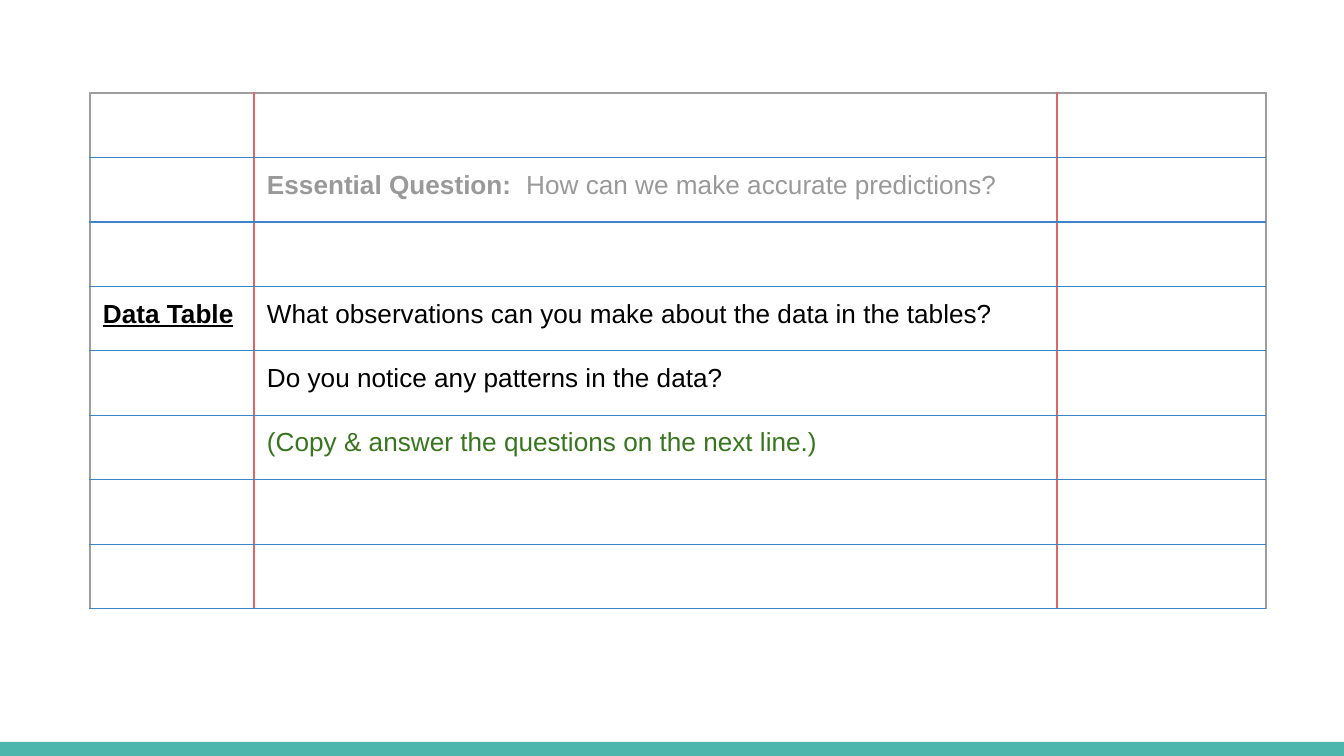
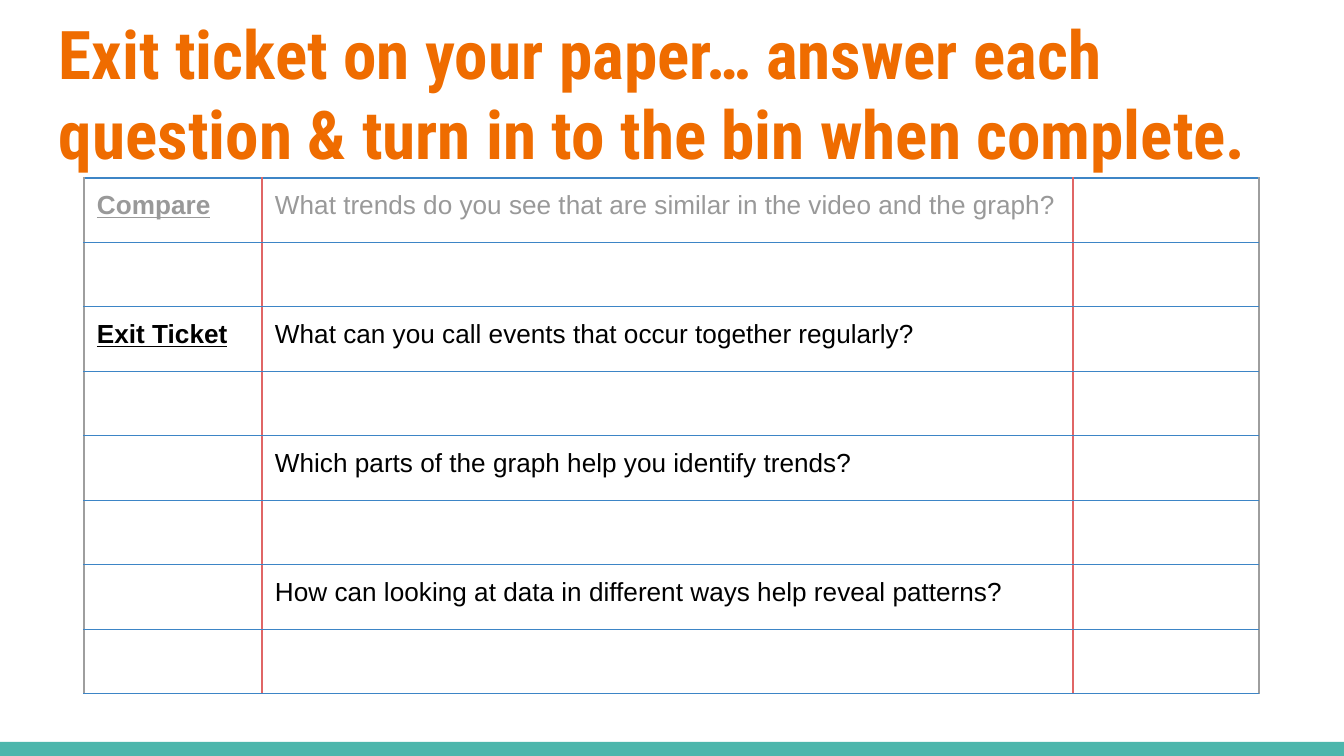
from lxml.etree import SubElement
from pptx import Presentation
from pptx.dml.color import RGBColor
from pptx.enum.shapes import MSO_SHAPE as Shape
from pptx.enum.text import MSO_ANCHOR as Anchor
from pptx.oxml.ns import qn
from pptx.util import Emu, Pt

COLORS = {"paper": "FFFFFF", "band": "4DB6AC", "title": "EF6C00", "rule": "3D85C6",
          "margin": "E06666", "edge": "9E9E9E", "ink": "000000", "faded": "999999",
          "green": "38761D"}

# Text formats
BODY = {"name": "Arial", "size": Pt(14), "bold": False, "color": "ink"}
FORMATS = {
    "title": BODY | {"name": "Roboto Condensed", "size": Pt(36), "bold": True,
                     "color": "title"},
    "body": BODY,
    "label": BODY | {"bold": True, "underline": True},
    "faded": BODY | {"color": "faded"},
    "faded bold": BODY | {"color": "faded", "bold": True},
    "faded label": BODY | {"color": "faded", "bold": True, "underline": True},
    "green": BODY | {"color": "green"},
}

# Content: each notebook row is (label spans, note spans)
BLANK = ([], [])
PAGES = [
    {"at": (90, 93), "columns": (164, 803, 209), "top": "edge", "rows": [
        BLANK,
        ([], [("Essential Question: ", "faded bold"),
              (" How can we make accurate predictions?", "faded")]),
        BLANK,
        ([("Data Table", "label")],
         [("What observations can you make about the data in the tables?", "body")]),
        ([], [("Do you notice any patterns in the data?", "body")]),
        ([], [("(Copy & answer the questions on the next line.)", "green")]),
        BLANK,
        BLANK,
    ]},
    {"title": "Exit ticket on your paper… answer each question & turn in to the bin "
              "when complete.",
     "at": (84, 178), "columns": (178, 811, 186), "top": "rule", "rows": [
        ([("Compare", "faded label")],
         [("What trends do you see that are similar in the video and the graph?", "faded")]),
        BLANK,
        ([("Exit Ticket", "label")],
         [("What can you call events that occur together regularly?", "body")]),
        BLANK,
        ([], [("Which parts of the graph help you identify trends?", "body")]),
        BLANK,
        ([], [("How can looking at data in different ways help reveal patterns?", "body")]),
        BLANK,
     ]},
]

# Layout in px
PAGE_W, PAGE_H = 1344, 756
BAND_H = 14
TABLE_H = 516
TITLE_BOX = (46, -1, 1252, 104)
INSET = 13
SIDES = {"left": "a:lnL", "right": "a:lnR", "top": "a:lnT", "bottom": "a:lnB"}


def px(length):
    return Emu(round(length * 914400 / 134.4))


def rgb(name):
    return RGBColor.from_string(COLORS[name])


def add_spans(para, spans):
    for text, kind in spans:
        span = para.add_run()
        span.text = text
        for key, value in FORMATS[kind].items():
            if key == "color":
                span.font.color.rgb = rgb(value)
            else:
                setattr(span.font, key, value)


def set_insets(target):
    for side in SIDES:
        setattr(target, f"margin_{side}", px(INSET))


def set_borders(cell, borders):
    props = cell._tc.get_or_add_tcPr()
    for side, tag in SIDES.items():
        line = SubElement(props, qn(tag), w=str(Pt(0.75)))
        fill = SubElement(line, qn("a:solidFill"))
        SubElement(fill, qn("a:srgbClr"), val=COLORS[borders[side]])


def add_band(page):
    band = page.shapes.add_shape(Shape.RECTANGLE, 0, px(PAGE_H - BAND_H),
                                 px(PAGE_W), px(BAND_H))
    band.shadow.inherit = False
    band.fill.solid()
    band.fill.fore_color.rgb = rgb("band")
    band.line.fill.background()


def add_title(page, text):
    box = page.shapes.add_textbox(*map(px, TITLE_BOX))
    frame = box.text_frame
    frame.word_wrap = True
    frame.vertical_anchor = Anchor.TOP
    set_insets(frame)
    add_spans(frame.paragraphs[0], [(text, "title")])


def add_notebook(page, at, columns, rows, top):
    frame = page.shapes.add_table(len(rows), len(columns), *map(px, at),
                                  px(sum(columns)), px(TABLE_H))
    table = frame.table
    table.first_row = table.horz_banding = False
    for column, width in zip(table.columns, columns):
        column.width = px(width)

    last = len(columns) - 1
    for r, row in enumerate(rows):
        table.rows[r].height = px(TABLE_H / len(rows))
        for c, spans in enumerate((*row, [])):
            cell = table.cell(r, c)
            set_insets(cell)
            para = cell.text_frame.paragraphs[0]
            add_spans(para, spans)
            if not spans:  # keeps empty rows from growing
                SubElement(para._p, qn("a:endParaRPr"), sz="1400")
            set_borders(cell, {
                "left": "edge" if c == 0 else "margin",
                "right": "edge" if c == last else "margin",
                "top": top if r == 0 else "rule",
                "bottom": "rule",
            })
            cell.fill.background()


def main():
    deck = Presentation()
    deck.slide_width, deck.slide_height = px(PAGE_W), px(PAGE_H)
    for content in PAGES:
        page = deck.slides.add_slide(deck.slide_layouts[6])
        page.background.fill.solid()
        page.background.fill.fore_color.rgb = rgb("paper")
        add_band(page)
        if "title" in content:
            add_title(page, content["title"])
        add_notebook(page, content["at"], content["columns"], content["rows"],
                     content["top"])
    deck.save("out.pptx")


if __name__ == "__main__":
    main()
